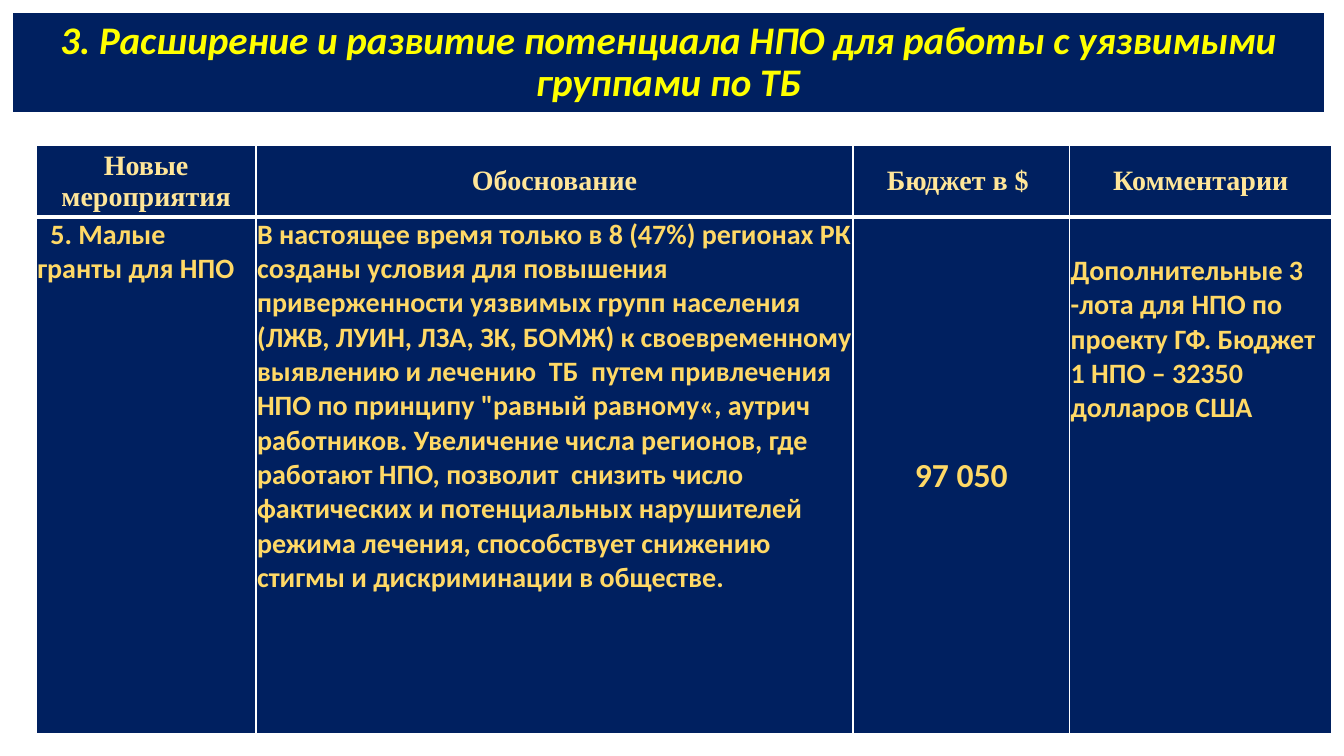
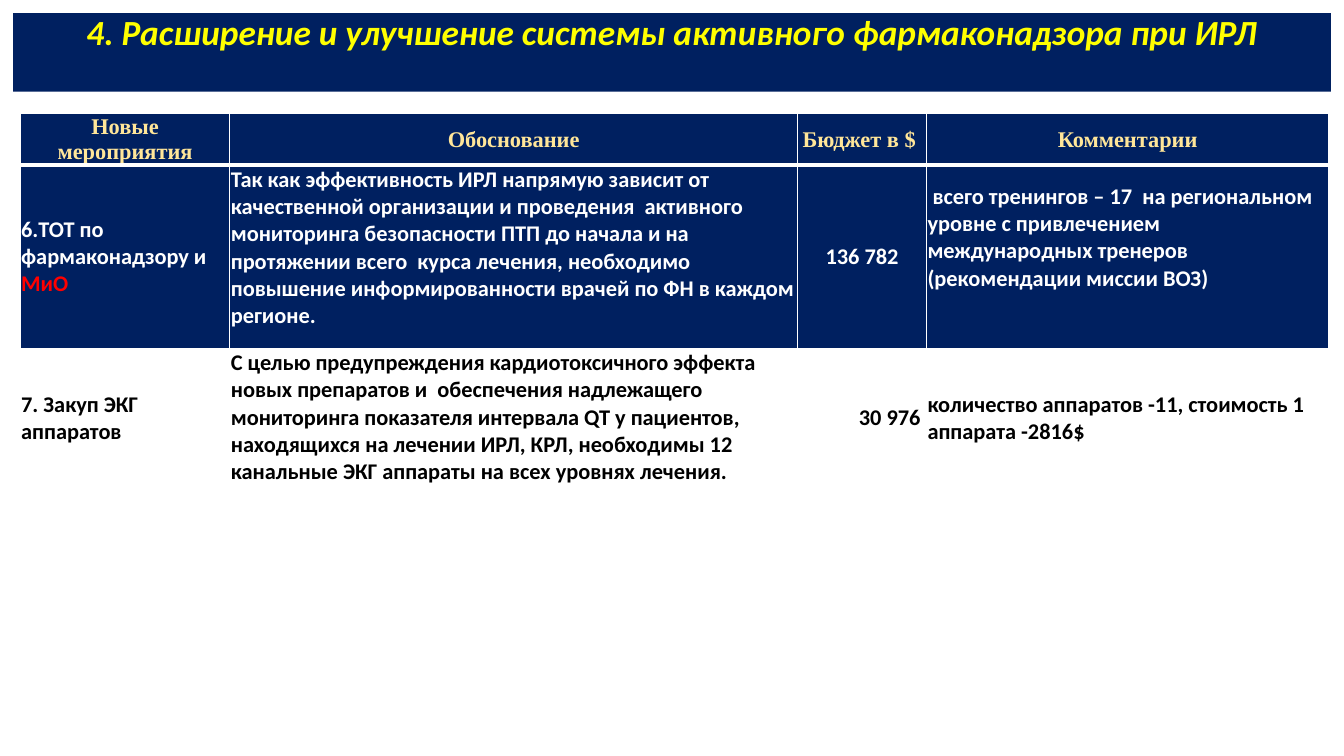
from lxml import etree
from pptx import Presentation
from pptx.dml.color import RGBColor
from pptx.enum.shapes import MSO_SHAPE
from pptx.enum.text import MSO_ANCHOR as ANCHOR, PP_ALIGN as ALIGN
from pptx.oxml.ns import qn
from pptx.util import Inches, Pt

NAVY = RGBColor(0x00, 0x20, 0x60)
YELLOW = RGBColor(0xFF, 0xFF, 0x00)
CREAM = RGBColor(0xFF, 0xE6, 0x99)
GOLD = RGBColor(0xFF, 0xD9, 0x66)
RED = RGBColor(0xFF, 0x00, 0x00)
WHITE = RGBColor(0xFF, 0xFF, 0xFF)
BLACK = RGBColor(0x00, 0x00, 0x00)

EDGE = 0.13
THIN, THICK = 1, 3
HEADERS = ["Новые мероприятия", "Обоснование", "Бюджет в $ ", "Комментарии"]
CELL_MARGINS = {"margin_left": 0.01, "margin_right": 0.01,
                "margin_top": 0.01, "margin_bottom": 0}

# A body cell is its paragraphs (each a list of runs, a run being a text
# and an optional colour) and the format values that differ from the default.
SLIDES = [
    {
        "title": "3. Расширение и развитие потенциала НПО для работы "
                 "с уязвимыми группами по ТБ",
        "band": (13, 0.98), "title_size": 27.9,
        "title_frame": {"vertical_anchor": ANCHOR.MIDDLE},
        "at": (0.36, 1.44), "cols": [2.18, 5.92, 2.15, 2.6],
        "rows": [0.71, 5.13], "size": 20,
        "body": [
            {"fill": NAVY, "color": GOLD, "cells": [
                ([[("5. Малые гранты для НПО",)]], {"indent": 0.13}),
                ([[("В настоящее время только в 8 (47%) регионах РК созданы "
                    "условия для повышения приверженности уязвимых групп "
                    "населения (ЛЖВ, ЛУИН, ЛЗА, ЗК, БОМЖ) к своевременному "
                    "выявлению и лечению  ТБ  путем привлечения НПО по "
                    "принципу \"равный равному«, аутрич работников. "
                    "Увеличение числа регионов, где работают НПО, позволит  "
                    "снизить число фактических и потенциальных нарушителей "
                    "режима лечения, способствует снижению стигмы и "
                    "дискриминации в обществе.",)]], {}),
                ([[("97 050",)]], {"anchor": ANCHOR.MIDDLE,
                                   "align": ALIGN.CENTER, "size": 24}),
                ([[("Дополнительные 3 -лота для НПО по проекту ГФ. Бюджет "
                    "1 НПО – 32350 долларов США",)]], {"margin_top": 0.37}),
            ]},
        ],
    },
    {
        "title": "4. Расширение и улучшение системы активного "
                 "фармаконадзора при ИРЛ",
        "band": (13.07, 0.78), "title_size": 25.2,
        "title_frame": {"vertical_anchor": ANCHOR.TOP,
                        "margin_top": Inches(0.02)},
        "at": (0.2, 1.13), "cols": [2.08, 5.63, 1.28, 3.99],
        "rows": [0.5, 1.82, 1.38], "size": 16,
        "body": [
            {"fill": NAVY, "color": WHITE, "cells": [
                ([[("6.ТОТ по фармаконадзору и ",), ("МиО", RED)]],
                 {"anchor": ANCHOR.MIDDLE}),
                ([[("Так как эффективность ИРЛ напрямую зависит от "
                    "качественной организации и проведения  активного "
                    "мониторинга безопасности ПТП до начала и на протяжении "
                    "всего  курса лечения, необходимо повышение "
                    "информированности врачей по ФН в каждом регионе.",)]],
                 {}),
                ([[("136 782",)]], {"anchor": ANCHOR.MIDDLE,
                                    "align": ALIGN.CENTER}),
                ([[("всего тренингов – 17  на региональном уровне с "
                    "привлечением международных тренеров",)],
                  [("(рекомендации миссии ВОЗ)",)]],
                 {"margin_top": 0.18, "indent": 0.05}),
            ]},
            {"fill": None, "color": BLACK, "cells": [
                ([[("7. Закуп ЭКГ аппаратов",)]], {"anchor": ANCHOR.MIDDLE}),
                ([[("С целью предупреждения кардиотоксичного эффекта новых "
                    "препаратов и  обеспечения надлежащего мониторинга "
                    "показателя интервала QT у пациентов, находящихся на "
                    "лечении ИРЛ, КРЛ, необходимы 12 канальные ЭКГ аппараты "
                    "на всех уровнях лечения.",)]], {}),
                ([[("30 976",)]], {"anchor": ANCHOR.MIDDLE,
                                   "align": ALIGN.RIGHT,
                                   "margin_right": 0.06}),
                ([[("количество аппаратов -11, стоимость 1 аппарата "
                    "-2816$",)]], {"anchor": ANCHOR.MIDDLE}),
            ]},
        ],
    },
]


def add_run(p, text, color, **font):
    r = p.add_run()
    r.text = text
    r.font.color.rgb = color
    for name, value in {"name": "Calibri", "bold": True, **font}.items():
        setattr(r.font, name, value)


def set_borders(cell, top, bottom):
    """Draw white cell borders; top and bottom are widths in points."""
    tcPr = cell._tc.get_or_add_tcPr()
    widths = {"lnL": THIN, "lnR": THIN, "lnT": top, "lnB": bottom}
    for i, (tag, width) in enumerate(widths.items()):
        ln = etree.Element(qn(f"a:{tag}"), w=str(Pt(width)))
        fill = etree.SubElement(ln, qn("a:solidFill"))
        etree.SubElement(fill, qn("a:srgbClr"), val=str(WHITE))
        tcPr.insert(i, ln)


prs = Presentation()
prs.slide_width, prs.slide_height = Inches(13.33), Inches(7.5)

for page in SLIDES:
    s = prs.slides.add_slide(prs.slide_layouts[6])

    band = s.shapes.add_shape(MSO_SHAPE.RECTANGLE, Inches(EDGE), Inches(EDGE),
                              *map(Inches, page["band"]))
    band.shadow.inherit = False
    band.fill.solid()
    band.fill.fore_color.rgb = NAVY
    band.line.fill.background()
    tf = band.text_frame
    tf.word_wrap = True
    for name, value in page["title_frame"].items():
        setattr(tf, name, value)
    p = tf.paragraphs[0]
    p.alignment, p.line_spacing = ALIGN.CENTER, 0.9
    add_run(p, page["title"], YELLOW, size=Pt(page["title_size"]), italic=True)

    cols, rows = page["cols"], page["rows"]
    size = map(Inches, (sum(cols), sum(rows)))
    table = s.shapes.add_table(len(rows), len(cols),
                               *map(Inches, page["at"]), *size).table
    table.first_row = table.horz_banding = False
    for col, width in zip(table.columns, cols):
        col.width = Inches(width)
    for row, height in zip(table.rows, rows):
        row.height = Inches(height)

    header_format = {"anchor": ANCHOR.MIDDLE, "align": ALIGN.CENTER,
                     "font": "Times New Roman"}
    header = {"fill": NAVY, "color": CREAM,
              "cells": [([[(text,)]], header_format) for text in HEADERS]}

    for i, row in enumerate([header] + page["body"]):
        for j, (paragraphs, fmt) in enumerate(row["cells"]):
            cell = table.cell(i, j)
            if row["fill"] is None:
                cell.fill.background()
            else:
                cell.fill.solid()
                cell.fill.fore_color.rgb = row["fill"]
            set_borders(cell, THICK if i == 1 else THIN,
                        THICK if i == 0 else THIN)
            for name, default in CELL_MARGINS.items():
                setattr(cell, name, Inches(fmt.get(name, default)))
            cell.vertical_anchor = fmt.get("anchor", ANCHOR.TOP)

            tf = cell.text_frame
            for k, runs in enumerate(paragraphs):
                p = tf.add_paragraph() if k else tf.paragraphs[0]
                p.alignment = fmt.get("align", ALIGN.LEFT)
                if k == 0 and "indent" in fmt:
                    p._p.get_or_add_pPr().set("indent",
                                              str(Inches(fmt["indent"])))
                for text, *color in runs:
                    add_run(p, text, color[0] if color else row["color"],
                            size=Pt(fmt.get("size", page["size"])),
                            name=fmt.get("font", "Calibri"))

prs.save("out.pptx")
